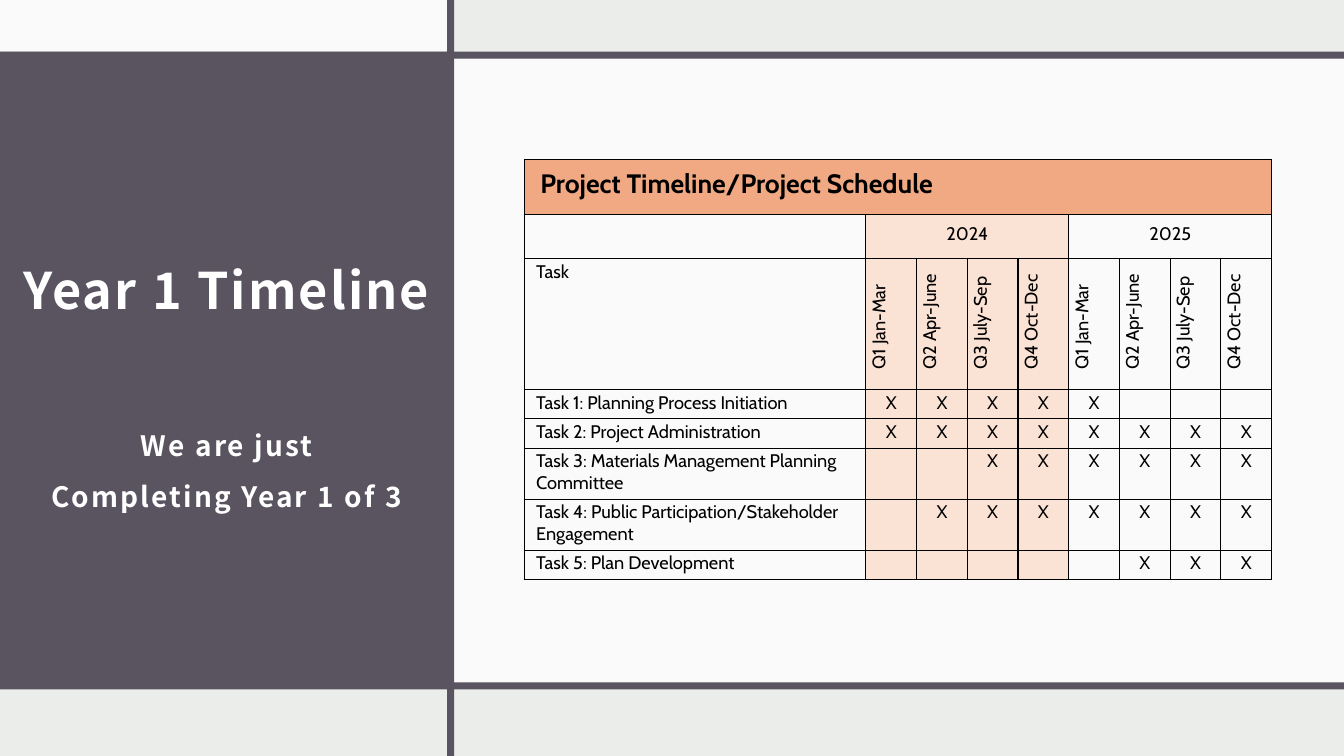
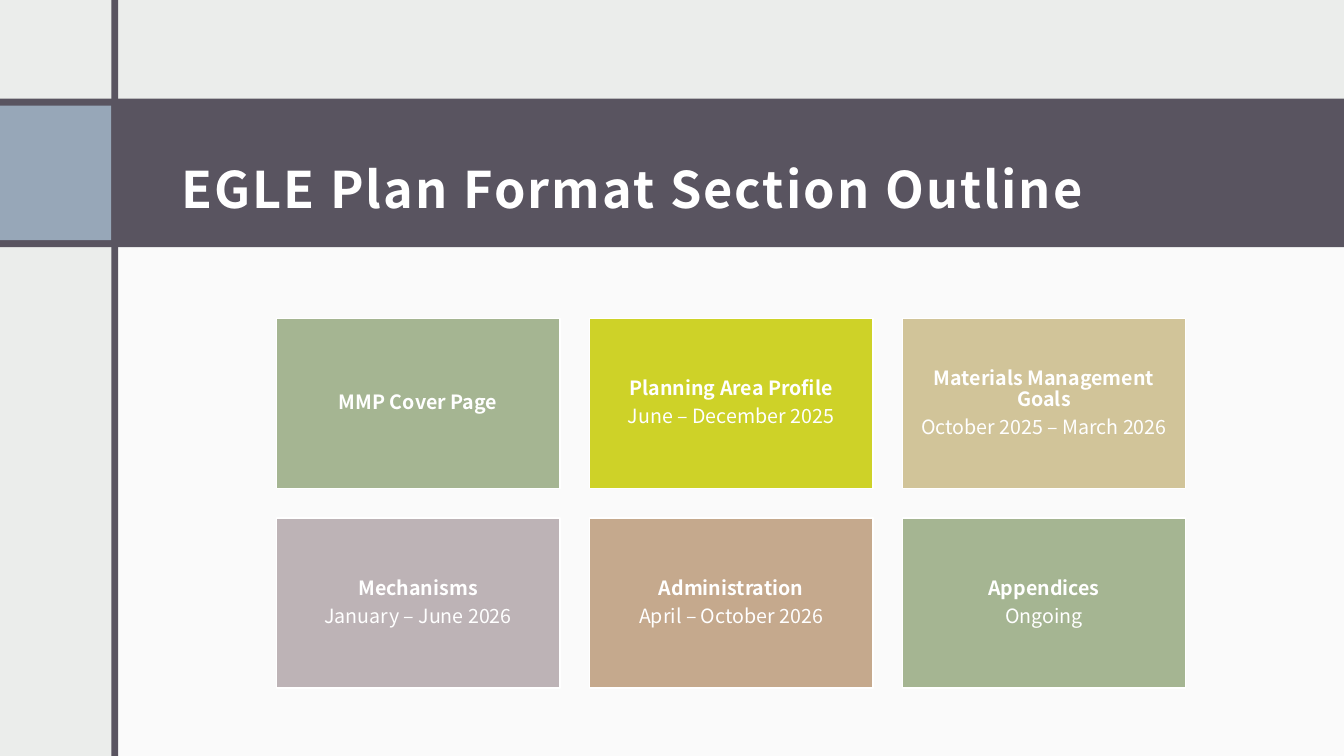
from lxml.etree import SubElement
from pptx import Presentation
from pptx.dml.color import RGBColor
from pptx.enum.shapes import MSO_SHAPE as Shape
from pptx.enum.text import MSO_ANCHOR as Anchor, MSO_AUTO_SIZE as Fit, PP_ALIGN as Align
from pptx.oxml import parse_xml
from pptx.oxml.ns import nsdecls, qn
from pptx.util import Pt


class Theme:
    back = "EBEDEB"
    pale = "FAFAFA"
    dark = "595460"
    blue = "97A7B8"
    white = "FFFFFF"
    black = "000000"
    head = "F1A983"
    tint = "FAE2D5"
    green = "A5B592"
    lime = "CED228"
    sand = "D1C499"
    mauve = "BDB3B6"
    tan = "C5A98D"
    sans = "Noto Sans CJK JP"
    cabin = "Cabin"
    title = 36
    sub = 20
    card = 14
    top = 19
    cell = 13


WIDE, HIGH, BAR = 960, 540, 5


def rect(slide, box, fill):
    shape = slide.shapes.add_shape(Shape.RECTANGLE, *map(Pt, box))
    shape.shadow.inherit = False
    shape.fill.solid()
    shape.fill.fore_color.rgb = RGBColor.from_string(fill)
    shape.line.fill.background()
    return shape


def style(para, size, color, font, bold=False, track=0):
    """Format all runs; an empty paragraph keeps the size for its height."""
    for run in para.runs:
        run.font.size = Pt(size)
        run.font.name = font
        run.font.bold = bold
        run.font.color.rgb = RGBColor.from_string(color)
        if track:
            run._r.get_or_add_rPr().set("spc", str(track))
    if not para.runs:
        para._p.get_or_add_endParaRPr().set("sz", str(size * 100))


deck = Presentation()
deck.slide_width, deck.slide_height = Pt(WIDE), Pt(HIGH)
ground = deck.slide_master.background.fill
ground.solid()
ground.fore_color.rgb = RGBColor.from_string(Theme.back)

# Bands and titles: title lines, title box, alignment, bands from back to front
pages = [
    (["Year 1 Timeline", "We are just", "Completing Year 1 of 3"],
     (0, 94.5, 324, 339), Align.CENTER,
     [((0, 37, 320, 451), Theme.dark),
      ((0, 0, 320, 37), Theme.pale),
      ((324, 42, 636, 446), Theme.pale),
      ((0, 487.5, WIDE, BAR), Theme.dark),
      ((319.5, 0, BAR, HIGH), Theme.dark),
      ((0, 37, WIDE, BAR), Theme.dark)]),
    (["EGLE Plan Format Section Outline"],
     (121, 82, 788.5, 81.5), Align.LEFT,
     [((84, 176, 876, 364), Theme.pale),
      ((0, 70.5, WIDE, 106), Theme.dark),
      ((0, 75.5, 79.5, 96), Theme.blue),
      ((79.5, 0, BAR, HIGH), Theme.dark)]),
]
for lines, box, align, bands in pages:
    slide = deck.slides.add_slide(deck.slide_layouts[5])
    for place, fill in bands:
        rect(slide, place, fill)
    title = slide.shapes.title
    slide.shapes._spTree.append(title._element)
    title.left, title.top, title.width, title.height = map(Pt, box)
    frame = title.text_frame
    frame.text = "\n".join(lines)
    frame.word_wrap = True
    frame.auto_size = Fit.NONE
    frame.vertical_anchor = Anchor.MIDDLE
    frame.margin_left = frame.margin_right = frame.margin_top = Pt(8.5)
    frame.margin_bottom = Pt(7)
    for i, para in enumerate(frame.paragraphs):
        para.alignment = align
        para.line_spacing = 1.5
        para.space_before = Pt(66 if i == 1 else 0)
        style(para, Theme.sub if i else Theme.title, Theme.white, Theme.sans, True, 150)

time, plan = deck.slides

# Schedule: each task with its first and last quarter
tasks = [
    ("Task 1: Planning Process Initiation", 1, 5),
    ("Task 2: Project Administration", 1, 8),
    ("Task 3: Materials Management Planning Committee", 3, 8),
    ("Task 4: Public Participation/Stakeholder Engagement", 2, 8),
    ("Task 5: Plan Development", 6, 8),
]
terms = ["Q1 Jan-Mar", "Q2 Apr-June", "Q3 July-Sep", "Q4 Oct-Dec"]
gap = [""] * 3
grid = [["Project Timeline/Project Schedule"] + [""] * 8,
        ["", "2024", *gap, "2025", *gap],
        ["Task"] + terms * 2]
for name, first, last in tasks:
    grid.append([name] + ["X" if first <= q <= last else "" for q in range(1, 9)])

wides = [244] + [36.25] * 8
highs = [39.5, 31.5, 93.5, 21, 21, 36.5, 36.5, 21]
table = time.shapes.add_table(len(highs), len(wides), Pt(374.5), Pt(113.75),
                              Pt(sum(wides)), Pt(sum(highs))).table
table.first_row = table.horz_banding = False
for col, wide in zip(table.columns, wides):
    col.width = Pt(wide)
for row, high in zip(table.rows, highs):
    row.height = Pt(high)

for r, texts in enumerate(grid):
    for c, text in enumerate(texts):
        cell = table.cell(r, c)
        cell.text_frame.text = text
        side, top, base = (11.5, 6, 6) if r < 2 else (8.5, 1.5, 0)
        cell.margin_left = cell.margin_right = Pt(side)
        cell.margin_top, cell.margin_bottom = Pt(top), Pt(base)
        if r == 0 or 1 <= c <= 4:
            cell.fill.solid()
            cell.fill.fore_color.rgb = RGBColor.from_string(Theme.tint if r else Theme.head)
        else:
            cell.fill.background()
        props = cell._tc.get_or_add_tcPr()
        for i, edge in enumerate(("lnL", "lnR", "lnT", "lnB")):
            line = parse_xml(f'<a:{edge} {nsdecls("a")} w="{int(Pt(1))}"/>')
            paint = SubElement(line, qn("a:solidFill"))
            SubElement(paint, qn("a:srgbClr")).set("val", Theme.black)
            props.insert(i, line)
        para = cell.text_frame.paragraphs[0]
        para.alignment = Align.CENTER if c and r != 2 else Align.LEFT
        if c and r == 2:
            props.set("vert", "vert270")
            para._p.get_or_add_pPr().set("marL", str(int(Pt(6))))
        style(para, Theme.cell if r or not text else Theme.top,
              Theme.black, Theme.cabin, r == 0)

table.cell(0, 0).merge(table.cell(0, 8))
for c in (1, 5):
    table.cell(1, c).merge(table.cell(1, c + 3))

# Section cards, three to a row
cards = [
    (Theme.green, ["MMP Cover Page"]),
    (Theme.lime, ["Planning Area Profile", "June – December 2025"]),
    (Theme.sand, ["Materials Management Goals", "October 2025 – March 2026"]),
    (Theme.mauve, ["Mechanisms", "January – June 2026"]),
    (Theme.tan, ["Administration", "April – October 2026"]),
    (Theme.green, ["Appendices", "Ongoing"]),
]
wide, high, space = 202.5, 121.5, 21
for i, (fill, lines) in enumerate(cards):
    row, col = divmod(i, 3)
    card = rect(plan, (197.5 + col * (wide + space), 227.5 + row * (high + space),
                       wide, high), fill)
    card.line.color.rgb = RGBColor.from_string(Theme.white)
    card.line.width = Pt(1)
    frame = card.text_frame
    frame.text = "\n".join(lines)
    frame.vertical_anchor = Anchor.MIDDLE
    frame.margin_left = frame.margin_right = Pt(4)
    frame.margin_top = frame.margin_bottom = Pt(4)
    for n, para in enumerate(frame.paragraphs):
        para.alignment = Align.CENTER
        para.line_spacing = 0.9
        para.space_before = Pt(5 if n else 0)
        style(para, Theme.card, Theme.white, Theme.sans, n == 0)

deck.save("out.pptx")
